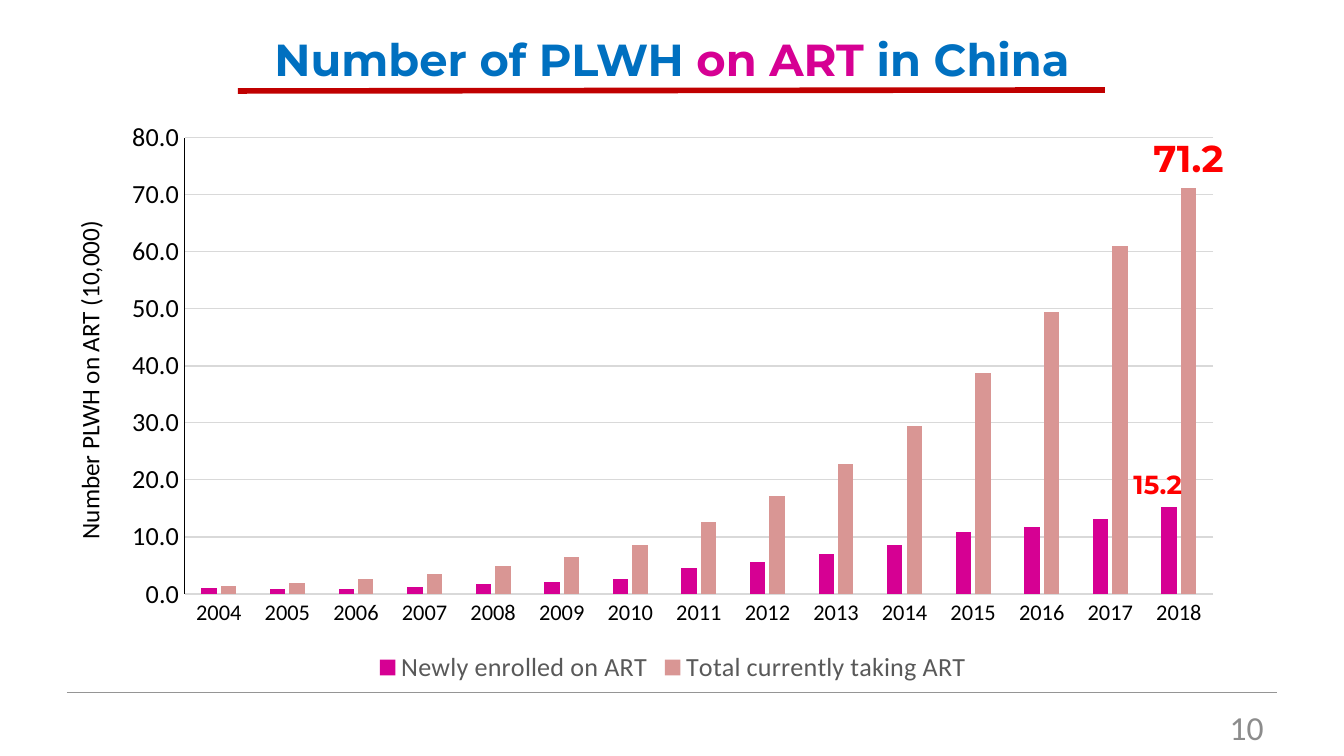
"""Build a slide with a column chart of people on ART in China by year."""
from pptx import Presentation
from pptx.chart.data import CategoryChartData
from pptx.dml.color import RGBColor
from pptx.enum.chart import XL_CHART_TYPE as Kind, XL_LABEL_POSITION as Spot
from pptx.enum.chart import XL_LEGEND_POSITION as Side, XL_TICK_MARK as Tick
from pptx.enum.shapes import MSO_CONNECTOR as Link
from pptx.enum.text import MSO_ANCHOR as Anchor, PP_ALIGN as Align
from pptx.oxml import parse_xml
from pptx.oxml.ns import nsdecls, qn
from pptx.util import Pt

PX = 914400 / 134.4


def style(font, size, color, name="Calibri", bold=False):
    font.size, font.name, font.bold = Pt(size), name, bold
    font.color.rgb = RGBColor.from_string(color)


def layout(**parts):
    tags = "".join(f'<c:{tag} val="{val}"/>' for tag, val in parts.items())
    return parse_xml(f'<c:layout {nsdecls("c")}><c:manualLayout>{tags}'
                     '</c:manualLayout></c:layout>')


deck = Presentation()
deck.slide_width, deck.slide_height = round(1344 * PX), round(756 * PX)
slide = deck.slides.add_slide(deck.slide_layouts[6])
shapes = slide.shapes

rules = [(67, 692, 1277, 692, "959595", 0.25), (238, 91, 1105, 90, "C00000", 3)]
for *ends, color, width in rules:
    rule = shapes.add_connector(Link.STRAIGHT, *[round(n * PX) for n in ends])
    rule.line.color.rgb = RGBColor.from_string(color)
    rule.line.width = Pt(width)
    rule._element.spPr.append(parse_xml(f'<a:effectLst {nsdecls("a")}/>'))

years = [str(year) for year in range(2004, 2019)]
series = [
    ("Newly enrolled on ART", "D60093", 14, -0.01,
     [1.0, 0.9, 0.9, 1.2, 1.7, 2.1, 2.6, 4.6, 5.6, 7.0, 8.5, 10.8, 11.7, 13.2, 15.2]),
    ("Total currently taking ART", "D99694", 20, 0,
     [1.3, 1.9, 2.6, 3.5, 4.8, 6.5, 8.6, 12.6, 17.1, 22.7, 29.5, 38.7, 49.5, 61.0, 71.2]),
]
data = CategoryChartData(number_format="0.0")
data.categories = years
for name, *_, vals in series:
    data.add_series(name, vals)
box = [round(n * PX) for n in (109, 110, 1128, 579)]
chart = shapes.add_chart(Kind.COLUMN_CLUSTERED, *box, data).chart
style(chart.font, 10, "000000")
chart.has_title = False
chart.has_legend = True
chart.legend.position = Side.BOTTOM
chart.legend.include_in_layout = False
style(chart.legend.font, 14, "595959")

area = chart._chartSpace.chart.plotArea
for old in area.findall(qn("c:layout")):
    area.remove(old)
area.insert(0, layout(layoutTarget="inner", xMode="edge", yMode="edge",
                      x=0.067, y=0.048, w=0.912, h=0.788))

plot = chart.plots[0]
plot.gap_width, plot.overlap, plot.vary_by_categories = 219, -27, False
for bars, (_, color, size, shift, vals) in zip(plot.series, series):
    bars.format.fill.solid()
    bars.format.fill.fore_color.rgb = RGBColor.from_string(color)
    label = bars.points[len(vals) - 1].data_label
    style(label.font, size, "FF0000", "Montserrat", True)
    label.position = Spot.OUTSIDE_END
    if shift:
        bars._element.find(".//" + qn("c:dLbl")).insert(1, layout(x=shift, y=0))

cat, val = chart.category_axis, chart.value_axis
val.minimum_scale, val.maximum_scale, val.major_unit = 0, 80, 10
val.tick_labels.number_format = "0.0"
val.tick_labels.number_format_is_linked = False
for axis, size in ((cat, 12), (val, 14)):
    axis.major_tick_mark = axis.minor_tick_mark = Tick.NONE
    style(axis.tick_labels.font, size, "000000")
lines = [(cat.format.line, "D9D9D9", 0.75), (val.format.line, "000000", 0.5),
         (val.major_gridlines.format.line, "D9D9D9", 0.75)]
for line, color, width in lines:
    line.color.rgb = RGBColor.from_string(color)
    line.width = Pt(width)

blue, pink = "0070C0", "D60093"
texts = [
    ((184, 26, 976, 66), Align.CENTER, Anchor.MIDDLE, 0, 24, "Montserrat",
     [("Number of PLWH ", blue), ("on ART ", pink), ("in China", blue)]),
    ((-85, 356, 349, 44), Align.LEFT, Anchor.TOP, 270, 13.5, "Calibri",
     [("Number PLWH on ART (10,000)", "000000")]),
    ((964, 700, 313, 40), Align.RIGHT, Anchor.TOP, 0, 18, "Calibri",
     [("10", "8C8C8C")]),
]
for place, align, anchor, turn, size, face, words in texts:
    item = shapes.add_textbox(*[round(n * PX) for n in place])
    item.rotation = turn
    frame = item.text_frame
    frame.word_wrap = not turn
    frame.vertical_anchor = anchor
    para = frame.paragraphs[0]
    para.alignment = align
    for word, color in words:
        run = para.add_run()
        run.text = word
        style(run.font, size, color, face, face == "Montserrat")

deck.save("out.pptx")
